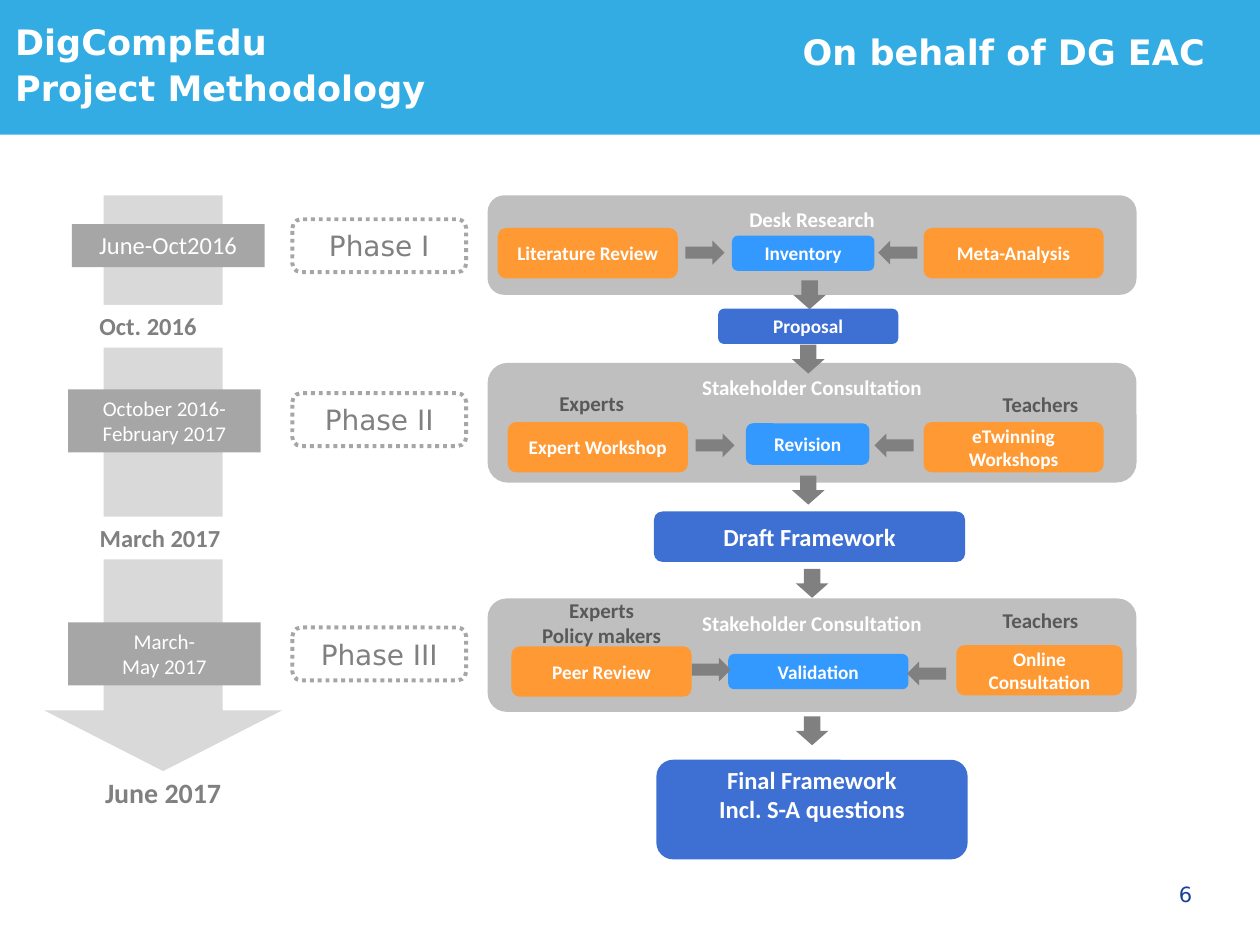
import pptx
import pptx.dml.color
import pptx.enum.dml
import pptx.enum.shapes
import pptx.enum.text
import pptx.util

Inches = pptx.util.Inches
RGB = pptx.dml.color.RGBColor
MSO = pptx.enum.shapes.MSO_SHAPE
ALIGN = pptx.enum.text.PP_ALIGN
ANCHOR = pptx.enum.text.MSO_ANCHOR

WHITE = RGB(0xFF, 0xFF, 0xFF)
SKY = RGB(0x33, 0xAC, 0xE3)
NAVY = RGB(0x16, 0x41, 0x94)
ORANGE = RGB(0xFF, 0x99, 0x33)
BLUE = RGB(0x33, 0x99, 0xFF)
ROYAL = RGB(0x3E, 0x6F, 0xD2)
PANEL = RGB(0xBF, 0xBF, 0xBF)
PALE = RGB(0xD9, 0xD9, 0xD9)
GREY = RGB(0xA6, 0xA6, 0xA6)
MID = RGB(0x80, 0x80, 0x80)
DARK = RGB(0x59, 0x59, 0x59)
BODY, HEAD = "Calibri", "DejaVu Sans"

PANEL_X, PANEL_W = 3.87, 5.15
PHASE_X, PHASE_W, PHASE_H = 2.32, 1.38, 0.42

# title, top, height
PANELS = [
    ("Desk Research", 1.55, 0.79),
    ("Stakeholder Consultation", 2.88, 0.95),
    ("Stakeholder Consultation", 4.75, 0.9),
]
PHASES = [("Phase I", 1.74), ("Phase II", 3.12), ("Phase III", 4.98)]

# text, left, top, width, height, fill, size
BOXES = [
    ("Literature Review", 3.95, 1.81, 1.43, 0.4, ORANGE, 11),
    ("Inventory", 5.81, 1.87, 1.13, 0.28, BLUE, 11),
    ("Meta-Analysis", 7.33, 1.81, 1.43, 0.4, ORANGE, 11),
    ("Proposal", 5.7, 2.45, 1.43, 0.28, ROYAL, 11),
    ("Expert Workshop", 4.03, 3.35, 1.43, 0.4, ORANGE, 11),
    ("Revision", 5.92, 3.36, 0.98, 0.33, BLUE, 11),
    ("eTwinning Workshops", 7.33, 3.35, 1.43, 0.4, ORANGE, 11),
    ("Draft Framework", 5.19, 4.06, 2.47, 0.4, ROYAL, 14),
    ("Peer Review", 4.06, 5.13, 1.43, 0.4, ORANGE, 11),
    ("Validation", 5.78, 5.19, 1.43, 0.28, BLUE, 11),
    ("Online Consultation", 7.59, 5.12, 1.32, 0.4, ORANGE, 11),
]

# rotation: (width, height, [(left, top), ...])
ARROWS = {
    0: (0.31, 0.19, [(5.44, 1.91), (5.52, 3.44), (5.49, 5.22)]),
    180: (0.31, 0.19, [(6.97, 1.91), (6.94, 3.44), (7.2, 5.25)]),
    90: (0.23, 0.26, [(6.31, 2.21), (6.3, 2.72), (6.3, 3.76), (6.33, 4.5), (6.33, 5.67)]),
}

# text, left, top, width, height, size
PERIODS = [
    ("June-Oct2016", 0.57, 1.78, 1.53, 0.34, 14),
    ("October 2016-\nFebruary 2017", 0.54, 3.09, 1.53, 0.5, 12),
    ("March-\nMay 2017", 0.54, 4.94, 1.53, 0.5, 12),
]
# text, left, top, width, height, alignment
MILESTONES = [
    ("Oct. 2016", 0.69, 2.42, 1.14, 0.34, ALIGN.LEFT),
    ("March 2017", 0.56, 4.1, 1.42, 0.34, ALIGN.CENTER),
]
# text, left, top, width, height, alignment, line spacing
GROUPS = [
    ("Experts", 4.34, 3.03, 0.72, 0.31, ALIGN.LEFT, 1.1),
    ("Teachers", 7.86, 3.04, 0.81, 0.31, ALIGN.LEFT, 1.1),
    ("Teachers", 7.86, 4.75, 0.81, 0.31, ALIGN.LEFT, 1.1),
    ("Experts\nPolicy makers", 4.2, 4.69, 1.15, 0.5, ALIGN.CENTER, None),
]
# text, left, top
HEADINGS = [
    ("DigCompEdu\vProject Methodology", 0.12, 0.13),
    ("On behalf of DG EAC", 6.37, 0.21),
]


def write(sp, text, size, color=WHITE, bold=True, name=BODY, align=ALIGN.CENTER,
          spacing=None, **frame):
    tf = sp.text_frame
    frame = {"word_wrap": True, "vertical_anchor": ANCHOR.TOP, **frame}
    for key, value in frame.items():
        setattr(tf, key, value)
    tf.text = text
    font = {"size": pptx.util.Pt(size), "bold": bold, "name": name}
    for p in tf.paragraphs:
        p.alignment = align
        if spacing:
            p.line_spacing = spacing
        for r in p.runs:
            for key, value in font.items():
                setattr(r.font, key, value)
            r.font.color.rgb = color


def add_shape(s, kind, box, fill):
    sp = s.shapes.add_shape(kind, *map(Inches, box))
    sp.shadow.inherit = False
    sp.fill.solid()
    sp.fill.fore_color.rgb = fill
    sp.line.fill.background()
    return sp


def add_text(s, box, text, size, **style):
    write(s.shapes.add_textbox(*map(Inches, box)), text, size, **style)


def add_header(s):
    add_shape(s, MSO.RECTANGLE, (0, 0, 10, 1.07), SKY)
    flush = dict.fromkeys(("margin_left", "margin_top", "margin_right", "margin_bottom"), 0)
    for text, x, y in HEADINGS:
        add_text(s, (x, y, 4.15, 0.71), text, 20, name=HEAD,
                 align=ALIGN.LEFT, spacing=1.1, **flush)
    add_text(s, (7.23, 6.9, 2.33, 0.4), "6", 12, color=NAVY, bold=False, name=HEAD,
             align=ALIGN.RIGHT, vertical_anchor=ANCHOR.MIDDLE, margin_top=0, margin_bottom=0)


def add_timeline(s):
    sp = add_shape(s, MSO.DOWN_ARROW, (0.35, 1.55, 1.89, 4.57), PALE)
    sp.adjustments[1] = 0.255
    for text, *box, size in PERIODS:
        write(add_shape(s, MSO.RECTANGLE, box, GREY), text, size, bold=False)
    for text, *box, align in MILESTONES:
        write(add_shape(s, MSO.RECTANGLE, box, WHITE), text, 14, color=MID, align=align)
    add_text(s, (0.46, 6.11, 1.67, 0.37), "June 2017", 16, color=MID)
    for text, y in PHASES:
        sp = add_shape(s, MSO.ROUNDED_RECTANGLE, (PHASE_X, y, PHASE_W, PHASE_H), WHITE)
        sp.line.color.rgb = GREY
        sp.line.width = pptx.util.Pt(2.25)
        sp.line.dash_style = pptx.enum.dml.MSO_LINE.ROUND_DOT
        write(sp, text, 16, color=MID, bold=False, name=HEAD, vertical_anchor=ANCHOR.MIDDLE)


def add_process(s):
    for text, y, h in PANELS:
        write(add_shape(s, MSO.ROUNDED_RECTANGLE, (PANEL_X, y, PANEL_W, h), PANEL), text, 12)
    for text, *box, fill, size in BOXES:
        write(add_shape(s, MSO.ROUNDED_RECTANGLE, box, fill), text, size,
              vertical_anchor=ANCHOR.MIDDLE)
    final = add_shape(s, MSO.ROUNDED_RECTANGLE, (5.21, 6.03, 2.47, 0.79), ROYAL)
    write(final, "Final Framework\nIncl. S-A questions", 14, margin_top=0)
    for rotation, (w, h, places) in ARROWS.items():
        for x, y in places:
            add_shape(s, MSO.RIGHT_ARROW, (x, y, w, h), MID).rotation = rotation
    for text, *box, align, spacing in GROUPS:
        add_text(s, box, text, 12, color=DARK, align=align, spacing=spacing, word_wrap=False)


def main():
    prs = pptx.Presentation()
    prs.slide_width, prs.slide_height = Inches(10), Inches(7.5)
    s = prs.slides.add_slide(prs.slide_layouts[6])
    add_header(s)
    add_timeline(s)
    add_process(s)
    prs.save("out.pptx")


if __name__ == "__main__":
    main()
